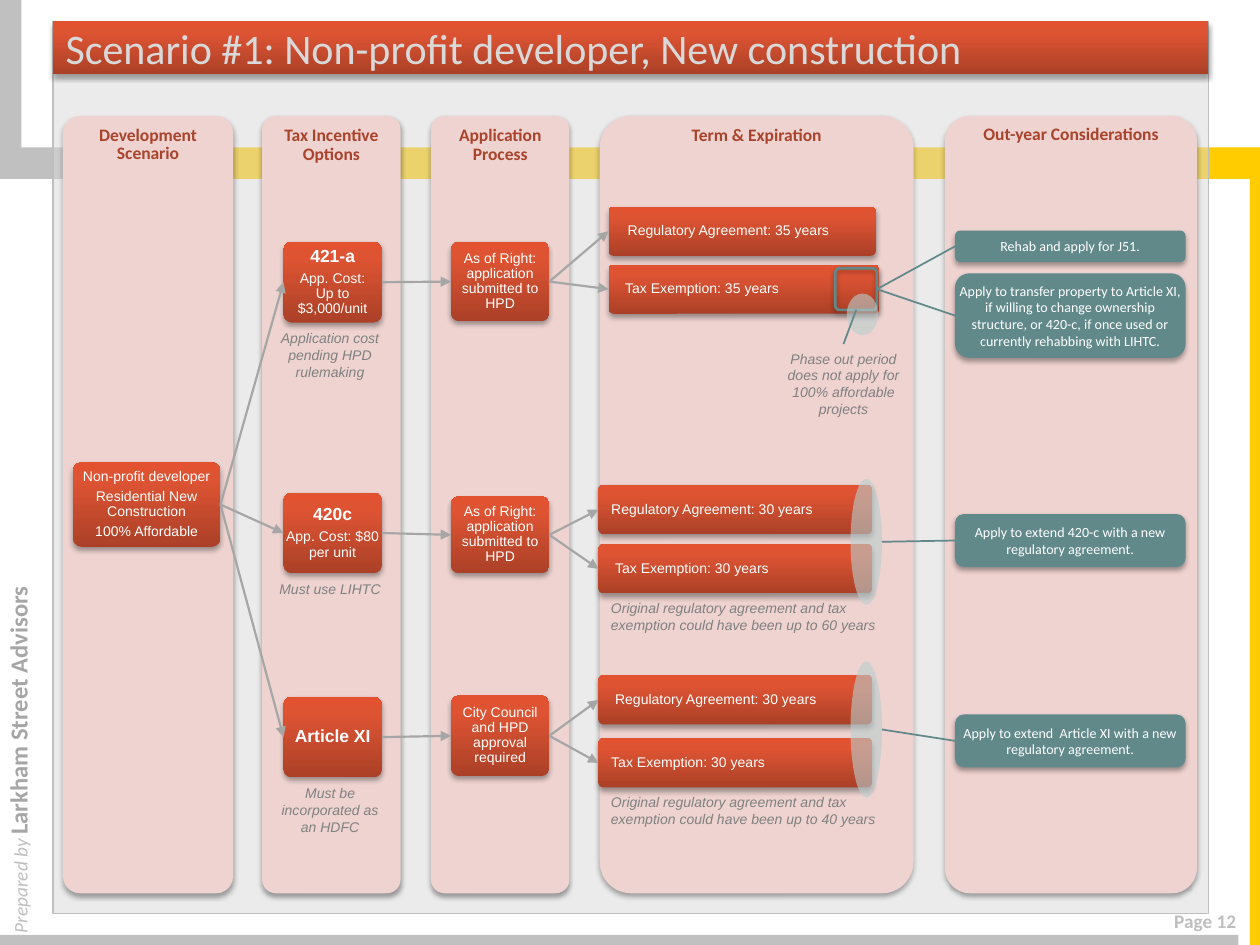
import pptx
import pptx.dml.color
import pptx.enum.shapes
import pptx.enum.text
import pptx.oxml
import pptx.oxml.ns
import pptx.util

PX = 9144
SHAPE = pptx.enum.shapes.MSO_SHAPE
ALIGN = pptx.enum.text.PP_ALIGN
ANCHOR = pptx.enum.text.MSO_ANCHOR
TOP, LEFT, BOTTOM, RIGHT = range(4)
GREY, GOLD, ARROW, TEAL, MIST = "C0C0C0", "FFCC00", "A6A6A6", "61898A", "BACECE"
RED = ((0, "AB4027"), (80, "DE5433"), (100, "E35230"))

BODY = {"name": "Arial", "size": pptx.util.Pt(8), "color": "FFFFFF"}
STRONG = {**BODY, "size": pptx.util.Pt(10), "bold": True}
NOTE = {**BODY, "color": "808080", "italic": True}
ADVICE = {**BODY, "name": "Calibri"}
HEADING = {**STRONG, "name": "Calibri", "color": "A9432B"}
TITLE = {"name": "Calibri", "size": pptx.util.Pt(24), "color": "D9D9D9"}
PAGE = {"name": "Calibri", "size": pptx.util.Pt(11), "color": "BFBFBF", "bold": True}
PREPARED = {**PAGE, "bold": False, "italic": True}
FIRM = {**PAGE, "size": pptx.util.Pt(14), "color": ARROW}


def rgb(value):
    """Return the colour for a hex string."""
    return pptx.dml.color.RGBColor.from_string(value)


def element(body):
    """Return a DrawingML element written as a short tag body."""
    return pptx.oxml.parse_xml(body.replace("/>", f' {pptx.oxml.ns.nsdecls("a")}/>', 1)
                               if body.count("<") == 1 else
                               body.replace(">", f' {pptx.oxml.ns.nsdecls("a")}>', 1))


def emu(*lengths):
    """Turn px lengths into EMU."""
    return [pptx.util.Emu(length * PX) for length in lengths]


def within(box, dx, dy, width, height):
    """Place a part relative to the corner of its box."""
    return box[0] + dx, box[1] + dy, width, height


def style(font, formats):
    """Apply a dict of format values to a font."""
    for key, value in formats.items():
        if key == "color":
            font.color.rgb = rgb(value)
        else:
            setattr(font, key, value)


def write(shape, paragraphs, align=ALIGN.CENTER, anchor=ANCHOR.MIDDLE, insets=(0, 0, 0, 0), **spacing):
    """Fill a shape with formatted paragraphs."""
    frame = shape.text_frame
    layout = {"word_wrap": True, "vertical_anchor": anchor}
    sides = ("margin_left", "margin_top", "margin_right", "margin_bottom")
    layout.update(zip(sides, emu(*insets)))
    for key, value in layout.items():
        setattr(frame, key, value)
    for index, (text, formats) in enumerate(paragraphs):
        paragraph = frame.add_paragraph() if index else frame.paragraphs[0]
        paragraph.text = text
        for key, value in {"alignment": align, **spacing}.items():
            setattr(paragraph, key, value)
        for run in paragraph.runs:
            style(run.font, formats)


def paint(shape, fill):
    """Fill a shape with nothing, one colour or gradient stops."""
    if fill is None:
        shape.fill.background()
    elif isinstance(fill, str):
        shape.fill.solid()
        shape.fill.fore_color.rgb = rgb(fill)
    else:
        shape.fill.gradient()
        gradient = shape._element.spPr.find(pptx.oxml.ns.qn("a:gradFill"))
        stops = gradient.find(pptx.oxml.ns.qn("a:gsLst"))
        for stop in list(stops):
            stops.remove(stop)
        for position, color in fill:
            stops.append(element(f'<a:gs pos="{position * 1000}"><a:srgbClr val="{color}"/></a:gs>'))
        gradient.find(pptx.oxml.ns.qn("a:lin")).set("ang", "16200000")


def cast_shadow(shape):
    """Give a shape a soft shadow below it."""
    shape.shadow.inherit = False
    effects = shape._element.spPr.find(pptx.oxml.ns.qn("a:effectLst"))
    effects.append(element('<a:outerShdw blurRad="39370" dist="22860" dir="5400000" rotWithShape="0">'
                           '<a:srgbClr val="000000"><a:alpha val="35000"/></a:srgbClr></a:outerShdw>'))


def block(slide, box, fill, kind=SHAPE.RECTANGLE, corner=None, alpha=None, line=None, shadow=False):
    """Draw one preset shape."""
    shape = slide.shapes.add_shape(kind, *emu(*box))
    paint(shape, fill)
    if corner:
        shape.adjustments[0] = corner
    if alpha:
        color = shape._element.spPr.find(".//" + pptx.oxml.ns.qn("a:srgbClr"))
        color.append(element(f'<a:alpha val="{alpha * 1000}"/>'))
    if line:
        shape.line.color.rgb = rgb(line[0])
        shape.line.width = pptx.util.Pt(line[1])
    else:
        shape.line.fill.background()
    shape.shadow.inherit = False
    if shadow:
        cast_shadow(shape)
    return shape


def card(slide, box, paragraphs, indent=None):
    """Draw a red card, left aligned when it has an indent."""
    shape = block(slide, box, RED, SHAPE.ROUNDED_RECTANGLE, 0.1, shadow=True)
    write(shape, paragraphs, ALIGN.CENTER if indent is None else ALIGN.LEFT,
          insets=(indent or 0, 0, 0, 0), line_spacing=0.9, space_after=pptx.util.Pt(3))
    return shape


def caption(slide, box, text, formats=NOTE, align=ALIGN.CENTER):
    """Place a text box with ordinary insets."""
    shape = slide.shapes.add_textbox(*emu(*box))
    write(shape, [(text, formats)], align, ANCHOR.TOP, (10, 5, 10, 5))
    return shape


def link(slide, start, end, color=ARROW, width=1.25, arrow=True):
    """Join two (shape, side) ends, or a point and a (shape, side) end."""
    line = slide.shapes.add_connector(pptx.enum.shapes.MSO_CONNECTOR.STRAIGHT, 0, 0, 0, 0)
    if isinstance(start[0], int):
        line.begin_x, line.begin_y = emu(*start)
    else:
        line.begin_connect(*start)
    line.end_connect(*end)
    line.line.color.rgb = rgb(color)
    line.line.width = pptx.util.Pt(width)
    if arrow:
        line.line._get_or_add_ln().append(element('<a:tailEnd type="triangle"/>'))
    line._element.spPr.append(element("<a:effectLst/>"))


def draw_frame(slide, box):
    """Draw the bands, margin texts, panel and title of the page."""
    for dx, dy, width, height, fill in ((0, 117, 67, 25, GREY), (75, 117, 925, 25, GOLD),
                                        (992, 142, 8, 608, GOLD), (0, 742, 983, 8, GREY),
                                        (0, 0, 17, 142, GREY)):
        block(slide, within(box, dx, dy, width, height), fill)
    caption(slide, within(box, 658, 717, 333, 29), "Page 12", PAGE, ALIGN.RIGHT)
    credit = caption(slide, within(box, -173, 546, 375, 34), "Prepared by ", PREPARED, ALIGN.LEFT)
    credit.rotation = 270
    firm = credit.text_frame.paragraphs[0].add_run()
    firm.text = "Larkham Street Advisors"
    style(firm.font, FIRM)
    block(slide, within(box, 42, 17, 917, 708), "D9D9D9", alpha=50, line=("BFBFBF", 0.75))
    title = slide.shapes.title
    title.left, title.top, title.width, title.height = emu(*within(box, 42, 17, 917, 42))
    slide.shapes._spTree.append(title._element)
    paint(title, RED)
    cast_shadow(title)
    title.text_frame.auto_size = pptx.enum.text.MSO_AUTO_SIZE.NONE
    write(title, [("Scenario #1: Non-profit developer, New construction", TITLE)],
          ALIGN.LEFT, insets=(10, 5, 10, 5))


def draw_column(slide, box, heading):
    """Draw a column with its heading at the top."""
    shape = block(slide, box, "EED3D0", SHAPE.ROUNDED_RECTANGLE, 0.1, shadow=True)
    inset = 8 - round(0.029 * box[2])
    write(shape, [(heading, HEADING)], anchor=ANCHOR.TOP, insets=[inset] * 4, line_spacing=0.9)


def draw_development(slide, box):
    """Draw the starting scenario card."""
    lines = ("Non-profit developer", "Residential New Construction", "100% Affordable")
    return card(slide, within(box, 8, 275, 117, 67), [(line, BODY) for line in lines])


def draw_options(slide, box):
    """Draw the tax incentive cards with their notes."""
    options = (
        (100, 50, [("421-a", STRONG), ("App. Cost:\nUp to $3,000/unit", BODY)],
         "Application cost pending HPD rulemaking"),
        (299, 23, [("420c", STRONG), ("App. Cost: $80 per unit", BODY)], "Must use LIHTC"),
        (461, 51, [("Article XI", STRONG)], "Must be incorporated as an HDFC"))
    cards = []
    for dy, note_height, lines, note in options:
        cards.append(card(slide, within(box, 17, dy, 78, 64), lines))
        caption(slide, within(box, 0, dy + 65, 108, note_height), note)
    return cards


def draw_processes(slide, box):
    """Draw the application process cards."""
    by_right = "As of Right: application submitted to HPD"
    processes = ((100, 63, by_right), (302, 61, by_right),
                 (460, 64, "City Council and HPD approval required"))
    return [card(slide, within(box, 16, dy, 78, height), [(text, BODY)])
            for dy, height, text in processes]


def draw_terms(slide, box):
    """Draw the term bars, their notes and the expiry marks."""
    terms = (((7, 72, 212, 14, "Regulatory Agreement: 35"), (7, 118, 215, 12, "Tax Exemption: 35")),
             ((-1, 293, 217, 9, "Regulatory Agreement: 30"), (-1, 340, 217, 12, "Tax Exemption: 30")),
             ((-1, 444, 217, 12, "Regulatory Agreement: 30"), (-1, 494, 217, 9, "Tax Exemption: 30")))
    pairs = [[card(slide, within(box, dx, dy, width, 39), [(f"{text} years", BODY)], indent)
              for dx, dy, width, indent, text in pair] for pair in terms]
    for dy, years in ((379, 60), (533, 40)):
        caption(slide, within(box, -1, dy, 258, 37), "Original regulatory agreement and tax exemption "
                f"could have been up to {years} years", align=ALIGN.LEFT)
    phase_note = caption(slide, within(box, 138, 181, 111, 64),
                         "Phase out period does not apply for 100% affordable projects")
    phase_out = block(slide, within(box, 187, 121, 33, 33), None, SHAPE.ROUNDED_RECTANGLE, 0.1,
                      line=(TEAL, 1.5), shadow=True)
    for dx, dy, height in ((196, 141, 33), (199, 288, 100), (199, 433, 108)):
        block(slide, within(box, dx, dy, 25, height), MIST, SHAPE.OVAL, alpha=60)
    link(slide, (phase_note, TOP), (phase_out, BOTTOM), TEAL, 1, False)
    expiries = [(phase_out, RIGHT), (box[0] + 224, box[1] + 338), (box[0] + 224, box[1] + 487)]
    return pairs, expiries


def draw_considerations(slide, box, expiries):
    """Draw the out-year advice and join it to the expiry marks."""
    advice = ((0, 91, 25, "Rehab and apply for J51."),
              (0, 125, 67, "Apply to transfer property to Article XI, if willing to change ownership "
               "structure, or 420-c, if once used or currently rehabbing with LIHTC."),
              (1, 316, 42, "Apply to extend 420-c with a new regulatory agreement."),
              (2, 475, 42, "Apply to extend  Article XI with a new regulatory agreement."))
    for track, dy, height, text in advice:
        shape = block(slide, within(box, 8, dy, 183, height), TEAL, SHAPE.ROUNDED_RECTANGLE, shadow=True)
        write(shape, [(text, ADVICE)])
        link(slide, expiries[track], (shape, LEFT), TEAL, 1, False)


def main():
    """Build the slide and save it."""
    deck = pptx.Presentation()
    deck.slide_width, deck.slide_height = emu(1000, 750)
    slide = deck.slides.add_slide(deck.slide_layouts[5])
    draw_frame(slide, (0, 0, 1000, 750))
    columns = ((50, 135, "Development Scenario"), (208, 110, "Tax Incentive Options"),
               (342, 110, "Application Process"), (476, 249, "Term & Expiration"),
               (750, 200, "Out-year Considerations"))
    boxes = [(left, 92, width, 617) for left, width, heading in columns]
    for box, (left, width, heading) in zip(boxes, columns):
        draw_column(slide, box, heading)
    developer = draw_development(slide, boxes[0])
    options = draw_options(slide, boxes[1])
    processes = draw_processes(slide, boxes[2])
    pairs, expiries = draw_terms(slide, boxes[3])
    for option, process, pair in zip(options, processes, pairs):
        link(slide, (developer, RIGHT), (option, LEFT))
        link(slide, (option, RIGHT), (process, LEFT))
        for term in pair:
            link(slide, (process, RIGHT), (term, LEFT))
    draw_considerations(slide, boxes[4], expiries)
    deck.save("out.pptx")


if __name__ == "__main__":
    main()
